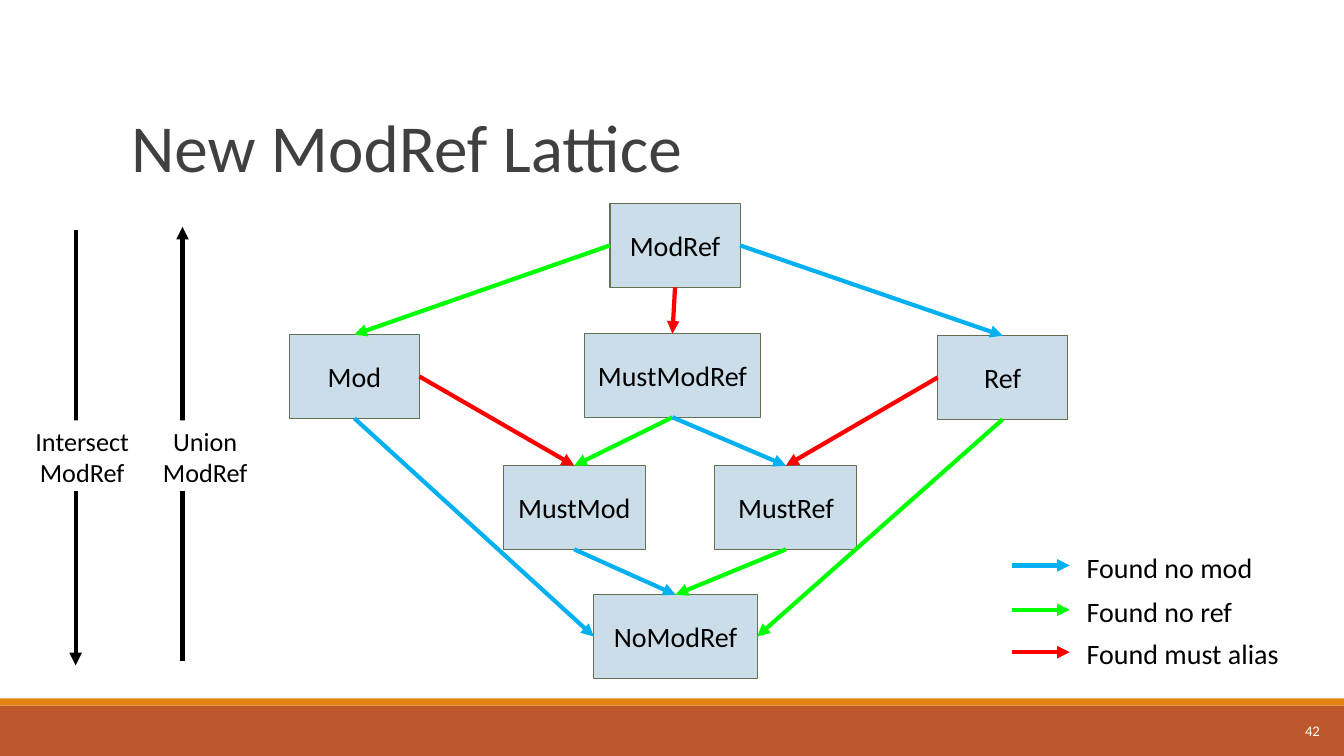
from lxml.etree import SubElement
from pptx import Presentation
from pptx.dml.color import RGBColor
from pptx.enum.shapes import MSO_CONNECTOR, MSO_SHAPE
from pptx.enum.text import MSO_ANCHOR, MSO_AUTO_SIZE, PP_ALIGN
from pptx.oxml.ns import qn
from pptx.util import Inches, Pt

COLORS = {
    "band": "BD582C", "stripe": "E48312", "title": "404040",
    "node": "CCDDEA", "node_line": "637052", "white": "FFFFFF", "black": "000000",
    "no_mod": "00B0F0", "no_ref": "00FF00", "must": "FF0000",
}
TOP, LEFT, BOTTOM, RIGHT = range(4)


def write(shape, text, size, color="black", align=PP_ALIGN.LEFT,
          anchor=MSO_ANCHOR.TOP):
    frame = shape.text_frame
    frame_format = {"word_wrap": True, "auto_size": MSO_AUTO_SIZE.NONE,
                    "vertical_anchor": anchor}
    for name, value in frame_format.items():
        setattr(frame, name, value)
    paragraph = frame.paragraphs[0]
    paragraph.text = text
    paragraph.alignment = align
    for name, value in {"name": "Calibri", "size": Pt(size)}.items():
        setattr(paragraph.font, name, value)
    paragraph.font.color.rgb = RGBColor.from_string(COLORS[color])


def add_arrow(color, x1=0, y1=0, x2=0, y2=0):
    arrow = slide.shapes.add_connector(
        MSO_CONNECTOR.STRAIGHT, Inches(x1), Inches(y1), Inches(x2), Inches(y2))
    arrow.line.color.rgb = RGBColor.from_string(COLORS[color])
    arrow.line.width = Pt(3)
    SubElement(arrow.line._get_or_add_ln(), qn("a:tailEnd"), type="triangle")
    SubElement(arrow._element.spPr, qn("a:effectLst"))
    return arrow


presentation = Presentation()
presentation.slide_width = Inches(13.33)
presentation.slide_height = Inches(7.5)
slide = presentation.slides.add_slide(presentation.slide_layouts[5])

# Title
title = slide.shapes.title
title_place = {"left": 1.2, "top": 0.31, "width": 11, "height": 1.59}
for name, value in title_place.items():
    setattr(title, name, Inches(value))
write(title, "New ModRef Lattice", 48, "title", anchor=MSO_ANCHOR.BOTTOM)

# Footer bands and slide number
for color, top, height in [("band", 7, 0.5), ("stripe", 6.93, 0.07)]:
    band = slide.shapes.add_shape(
        MSO_SHAPE.RECTANGLE, 0, Inches(top), presentation.slide_width, Inches(height))
    band.shadow.inherit = False
    band.fill.solid()
    band.fill.fore_color.rgb = RGBColor.from_string(COLORS[color])
    band.line.fill.background()
number = slide.shapes.add_textbox(Inches(11.76), Inches(7.05), Inches(1.43), Inches(0.4))
write(number, "42", 10.5, "white", PP_ALIGN.RIGHT, MSO_ANCHOR.MIDDLE)

# Lattice nodes: left, top, width
nodes = {
    "ModRef": (6.05, 2.02, 1.29),
    "Mod": (2.87, 3.32, 1.29),
    "MustModRef": (5.8, 3.31, 1.74),
    "Ref": (9.3, 3.33, 1.29),
    "MustMod": (4.99, 4.62, 1.41),
    "MustRef": (7.09, 4.62, 1.41),
    "NoModRef": (5.89, 5.9, 1.62),
}
boxes = {}
for text, (left, top, width) in nodes.items():
    box = slide.shapes.add_shape(
        MSO_SHAPE.RECTANGLE, Inches(left), Inches(top), Inches(width), Inches(0.83))
    box.shadow.inherit = False
    box.fill.solid()
    box.fill.fore_color.rgb = RGBColor.from_string(COLORS["node"])
    box.line.color.rgb = RGBColor.from_string(COLORS["node_line"])
    box.line.width = Pt(0.75)
    write(box, text, 20, align=PP_ALIGN.CENTER, anchor=MSO_ANCHOR.MIDDLE)
    boxes[text] = box

# Lattice edges
edges = [
    ("no_ref", "ModRef", LEFT, "Mod", TOP),
    ("must", "ModRef", BOTTOM, "MustModRef", TOP),
    ("no_mod", "ModRef", RIGHT, "Ref", TOP),
    ("must", "Mod", RIGHT, "MustMod", TOP),
    ("no_mod", "Mod", BOTTOM, "NoModRef", LEFT),
    ("no_ref", "MustModRef", BOTTOM, "MustMod", TOP),
    ("no_mod", "MustModRef", BOTTOM, "MustRef", TOP),
    ("must", "Ref", LEFT, "MustRef", TOP),
    ("no_ref", "Ref", BOTTOM, "NoModRef", RIGHT),
    ("no_mod", "MustMod", BOTTOM, "NoModRef", TOP),
    ("no_ref", "MustRef", BOTTOM, "NoModRef", TOP),
]
for color, source, source_side, target, target_side in edges:
    edge = add_arrow(color)
    edge.begin_connect(boxes[source], source_side)
    edge.end_connect(boxes[target], target_side)

# Legend
legend = [("no_mod", "Found no mod", 5.61), ("no_ref", "Found no ref", 6.05),
          ("must", "Found must alias", 6.47)]
for color, text, y in legend:
    add_arrow(color, 10.04, y, 10.61, y)
    label = slide.shapes.add_textbox(
        Inches(10.68), Inches(y - 0.2), Inches(2.54), Inches(0.43))
    write(label, text, 20)

# Direction arrows with labels over them
directions = [("Intersect\nModRef", 0.75, 2.28, 6.6, 0.11, 1.41),
              ("Union\nModRef", 1.81, 6.56, 2.25, 1.39, 1.29)]
for text, x, start, end, left, width in directions:
    add_arrow("black", x, start, x, end)
    label = slide.shapes.add_shape(
        MSO_SHAPE.RECTANGLE, Inches(left), Inches(4.17), Inches(width), Inches(0.7))
    label.shadow.inherit = False
    label.fill.solid()
    label.fill.fore_color.rgb = RGBColor.from_string(COLORS["white"])
    label.line.fill.background()
    write(label, text, 18.7, align=PP_ALIGN.CENTER)

presentation.save("out.pptx")
